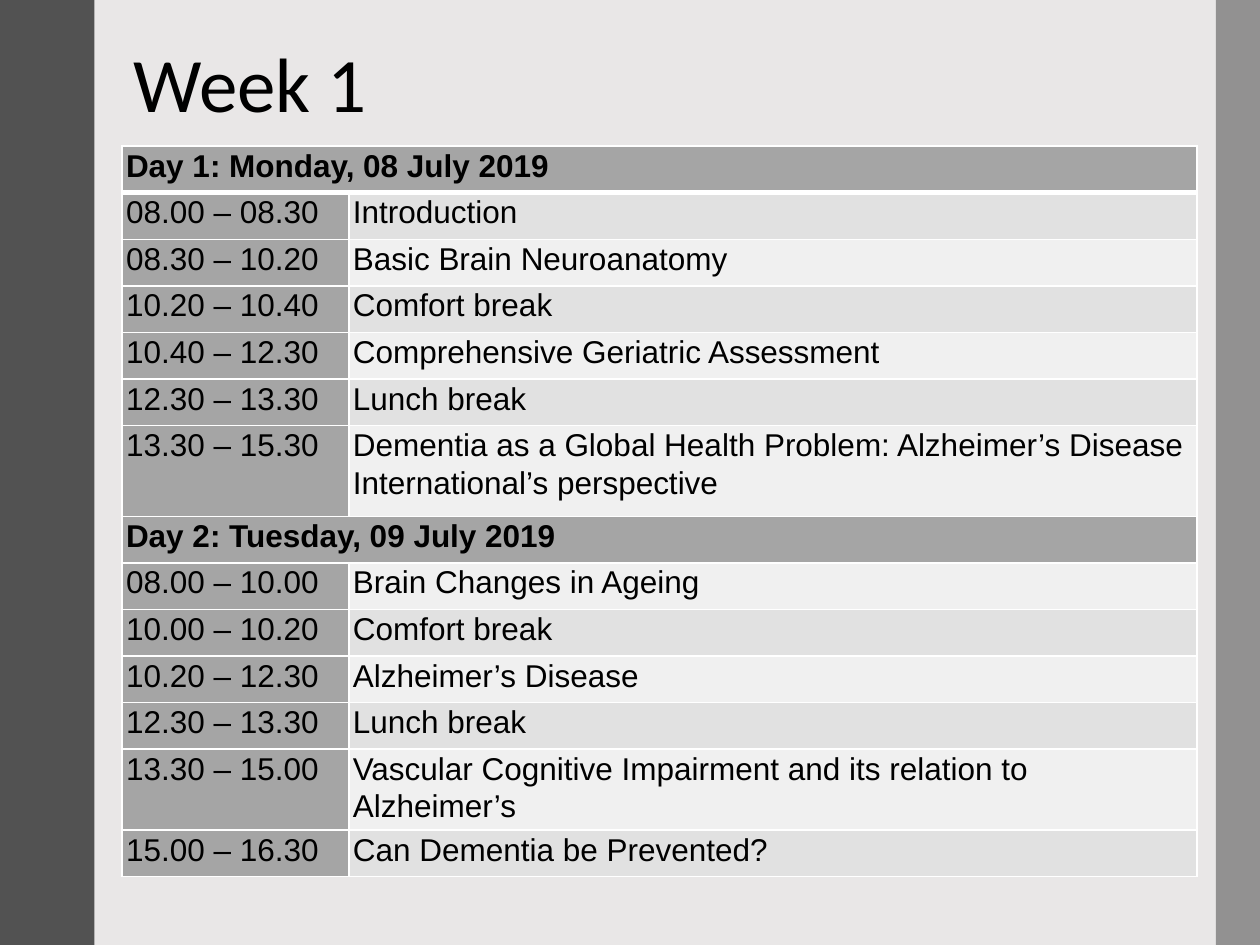
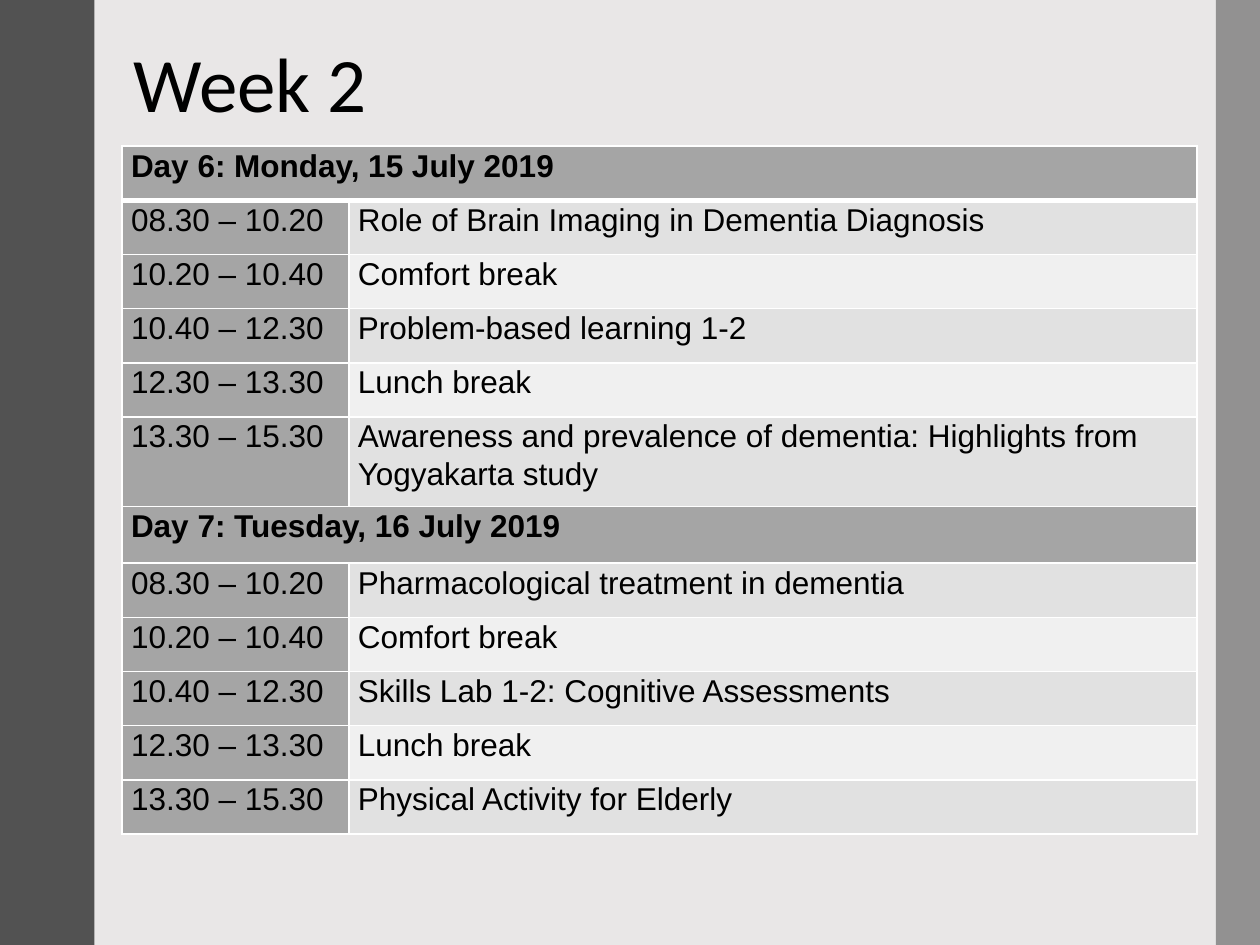
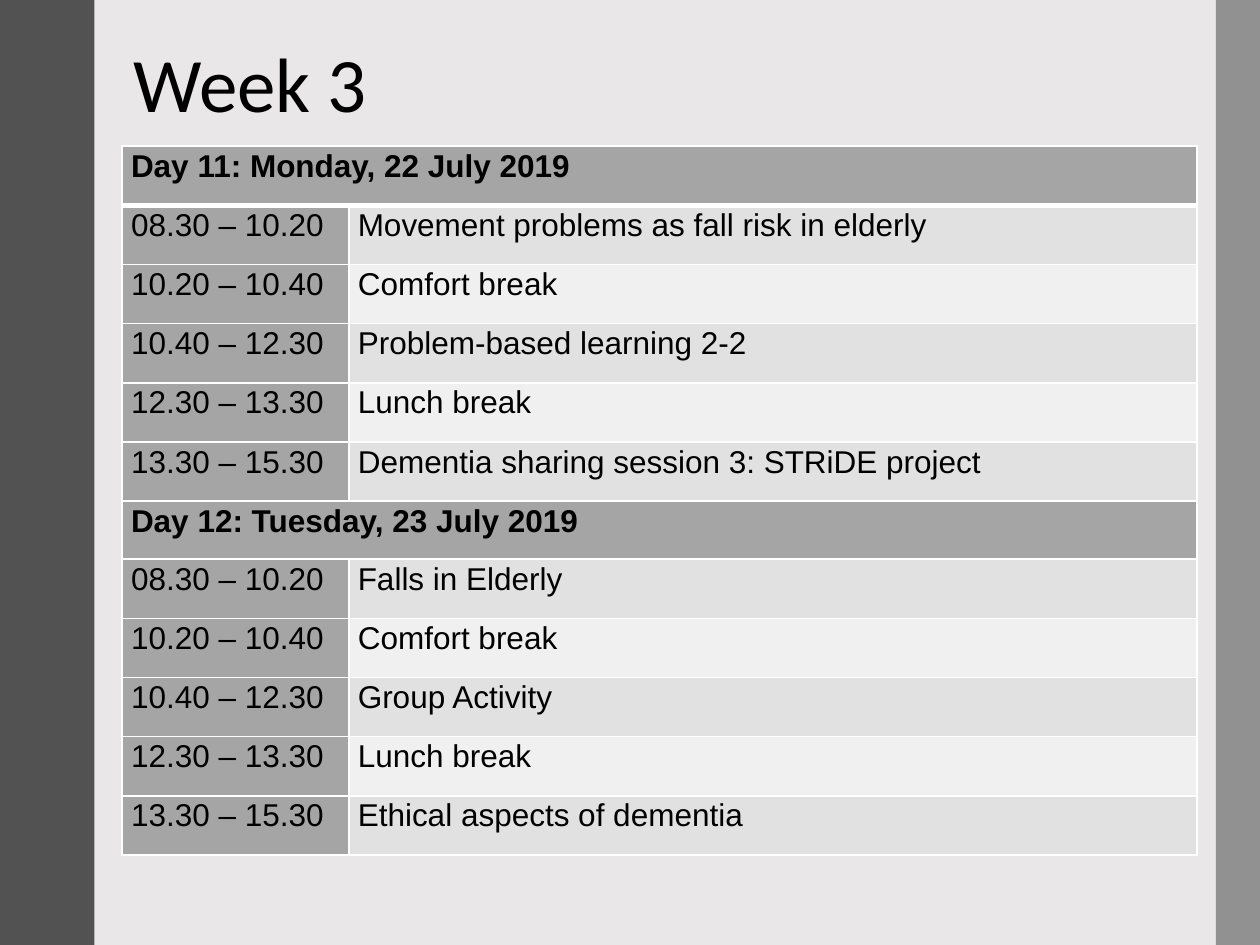
from lxml import etree
from pptx import Presentation
from pptx.dml.color import RGBColor
from pptx.enum.shapes import MSO_SHAPE
from pptx.enum.text import MSO_ANCHOR
from pptx.oxml.ns import qn
from pptx.util import Inches, Pt

RECTANGLE = MSO_SHAPE.RECTANGLE
MIDDLE = MSO_ANCHOR.MIDDLE

BACKGROUND = RGBColor(0xE9, 0xE7, 0xE7)
LEFT_BAND = RGBColor(0x52, 0x52, 0x52)
RIGHT_BAND = RGBColor(0x59, 0x59, 0x59)
HEADING_FILL = RGBColor(0xA5, 0xA5, 0xA5)
ODD_ROW = RGBColor(0xE1, 0xE1, 0xE1)
EVEN_ROW = RGBColor(0xF0, 0xF0, 0xF0)
BORDER = RGBColor(0xFF, 0xFF, 0xFF)
BLACK = RGBColor(0x00, 0x00, 0x00)

TITLE_FONT = "Calibri"
TABLE_FONT = "Arial"
COLUMN_WIDTHS = (1.8, 6.73)

FULL_DAY_TIMES = ("08.30 – 10.20", "10.20 – 10.40", "10.40 – 12.30",
                  "12.30 – 13.30", "13.30 – 15.30")


def full_day(heading, *topics):
    """Return the rows of a day that follows the usual timetable."""
    return [(heading,), *zip(FULL_DAY_TIMES, topics)]


WEEKS = [
    {
        "title": "Week 1",
        "row_height": 0.37,
        "special_heights": {6: 0.72},
        "side_margin": 0.03,
        "rows": [
            ("Day 1: Monday, 08 July 2019",),
            ("08.00 – 08.30", "Introduction"),
            ("08.30 – 10.20", "Basic Brain Neuroanatomy"),
            ("10.20 – 10.40", "Comfort break"),
            ("10.40 – 12.30", "Comprehensive Geriatric Assessment"),
            ("12.30 – 13.30", "Lunch break"),
            ("13.30 – 15.30", "Dementia as a Global Health Problem: "
                              "Alzheimer’s Disease International’s perspective"),
            ("Day 2: Tuesday, 09 July 2019",),
            ("08.00 – 10.00", "Brain Changes in Ageing"),
            ("10.00 – 10.20", "Comfort break"),
            ("10.20 – 12.30", "Alzheimer’s Disease"),
            ("12.30 – 13.30", "Lunch break"),
            ("13.30 – 15.00", "Vascular Cognitive Impairment and its "
                              "relation to Alzheimer’s"),
            ("15.00 – 16.30", "Can Dementia be Prevented?"),
        ],
    },
    {
        "title": "Week 2",
        "row_height": 0.43,
        "special_heights": {5: 0.71, 6: 0.45},
        "side_margin": 0.07,
        "rows": full_day(
            "Day 6: Monday, 15 July 2019",
            "Role of Brain Imaging in Dementia Diagnosis",
            "Comfort break",
            "Problem-based learning 1-2",
            "Lunch break",
            "Awareness and prevalence of dementia: Highlights from Yogyakarta study",
        ) + full_day(
            "Day 7: Tuesday, 16 July 2019",
            "Pharmacological treatment in dementia",
            "Comfort break",
            "Skills Lab 1-2: Cognitive Assessments",
            "Lunch break",
            "Physical Activity for Elderly",
        ),
    },
    {
        "title": "Week 3",
        "row_height": 0.47,
        "special_heights": {6: 0.46},
        "side_margin": 0.07,
        "rows": full_day(
            "Day 11: Monday, 22 July 2019",
            "Movement problems as fall risk in elderly",
            "Comfort break",
            "Problem-based learning 2-2",
            "Lunch break",
            "Dementia sharing session 3: STRiDE project",
        ) + full_day(
            "Day 12: Tuesday, 23 July 2019",
            "Falls in Elderly",
            "Comfort break",
            "Group Activity",
            "Lunch break",
            "Ethical aspects of dementia",
        ),
    },
]


def write_text(text_frame, text, *, size, font, bold=False, line_spacing=1.0):
    """Write one formatted paragraph into a text frame."""
    text_frame.word_wrap = True
    paragraph = text_frame.paragraphs[0]
    paragraph.line_spacing = line_spacing
    run = paragraph.add_run()
    run.text = text
    run.font.size = Pt(size)
    run.font.name = font
    run.font.bold = bold
    run.font.color.rgb = BLACK


def set_borders(cell, top=1, bottom=1):
    """Give a cell solid borders with widths in points."""
    properties = cell._tc.get_or_add_tcPr()
    widths = {"a:lnL": 1, "a:lnR": 1, "a:lnT": top, "a:lnB": bottom}
    for position, (tag, width) in enumerate(widths.items()):
        line = etree.Element(qn(tag), w=str(Pt(width)))
        fill = etree.SubElement(line, qn("a:solidFill"))
        etree.SubElement(fill, qn("a:srgbClr"), val=str(BORDER))
        properties.insert(position, line)


class ScheduleDeck:
    """Hold the schedule style and the current slide."""

    def __init__(self):
        self.presentation = Presentation()
        self.presentation.slide_width = Inches(10)
        self.presentation.slide_height = Inches(7.5)
        self.slide = None

    def add_slide(self):
        """Start a blank slide on the shared background."""
        self.slide = self.presentation.slides.add_slide(
            self.presentation.slide_layouts[6])
        fill = self.slide.background.fill
        fill.solid()
        fill.fore_color.rgb = BACKGROUND

    def add_title(self, text):
        """Add the slide title."""
        shape = self.slide.shapes.add_textbox(
            Inches(0.96), Inches(0.22), Inches(8.09), Inches(0.95))
        shape.text_frame.vertical_anchor = MIDDLE
        write_text(shape.text_frame, text, size=44, font=TITLE_FONT,
                   line_spacing=0.9)

    def add_band(self, left, width, color, opacity=100):
        """Add a full-height vertical band."""
        shape = self.slide.shapes.add_shape(
            RECTANGLE, Inches(left), 0, Inches(width),
            self.presentation.slide_height)
        shape.shadow.inherit = False
        shape.line.fill.background()
        shape.fill.solid()
        shape.fill.fore_color.rgb = color
        if opacity < 100:
            color_element = shape._element.spPr.find(
                f"{qn('a:solidFill')}/{qn('a:srgbClr')}")
            etree.SubElement(color_element, qn("a:alpha"),
                             val=str(opacity * 1000))

    def add_schedule(self, rows, row_height, special_heights, side_margin):
        """Add the timetable, where a row with one entry is a day heading."""
        heights = [special_heights.get(index, row_height)
                   for index in range(len(rows))]
        table = self.slide.shapes.add_table(
            len(rows), len(COLUMN_WIDTHS), Inches(0.97), Inches(1.16),
            Inches(sum(COLUMN_WIDTHS)), Inches(sum(heights))).table
        for column, width in zip(table.columns, COLUMN_WIDTHS):
            column.width = Inches(width)
        for row_index, (entries, height) in enumerate(zip(rows, heights)):
            table.rows[row_index].height = Inches(height)
            is_heading = len(entries) == 1
            topic_fill = ODD_ROW if row_index % 2 else EVEN_ROW
            for column_index in range(len(COLUMN_WIDTHS)):
                cell = table.cell(row_index, column_index)
                cell.margin_left = cell.margin_right = Inches(side_margin)
                cell.margin_top = cell.margin_bottom = 0
                cell.fill.solid()
                cell.fill.fore_color.rgb = (
                    HEADING_FILL if is_heading or column_index == 0
                    else topic_fill)
                set_borders(cell, top=3 if row_index == 1 else 1,
                            bottom=3 if row_index == 0 else 1)
            for column_index, text in enumerate(entries):
                write_text(table.cell(row_index, column_index).text_frame, text,
                           size=18, font=TABLE_FONT, bold=is_heading,
                           line_spacing=1.07)
            if is_heading:
                table.cell(row_index, 0).merge(table.cell(row_index, 1))


def main():
    """Build one slide for each week."""
    deck = ScheduleDeck()
    for week in WEEKS:
        deck.add_slide()
        deck.add_title(week["title"])
        deck.add_band(0, 0.75, LEFT_BAND)
        deck.add_band(9.65, 0.38, RIGHT_BAND, opacity=60)
        deck.add_schedule(week["rows"], week["row_height"],
                          week["special_heights"], week["side_margin"])
    deck.presentation.save("out.pptx")


if __name__ == "__main__":
    main()
